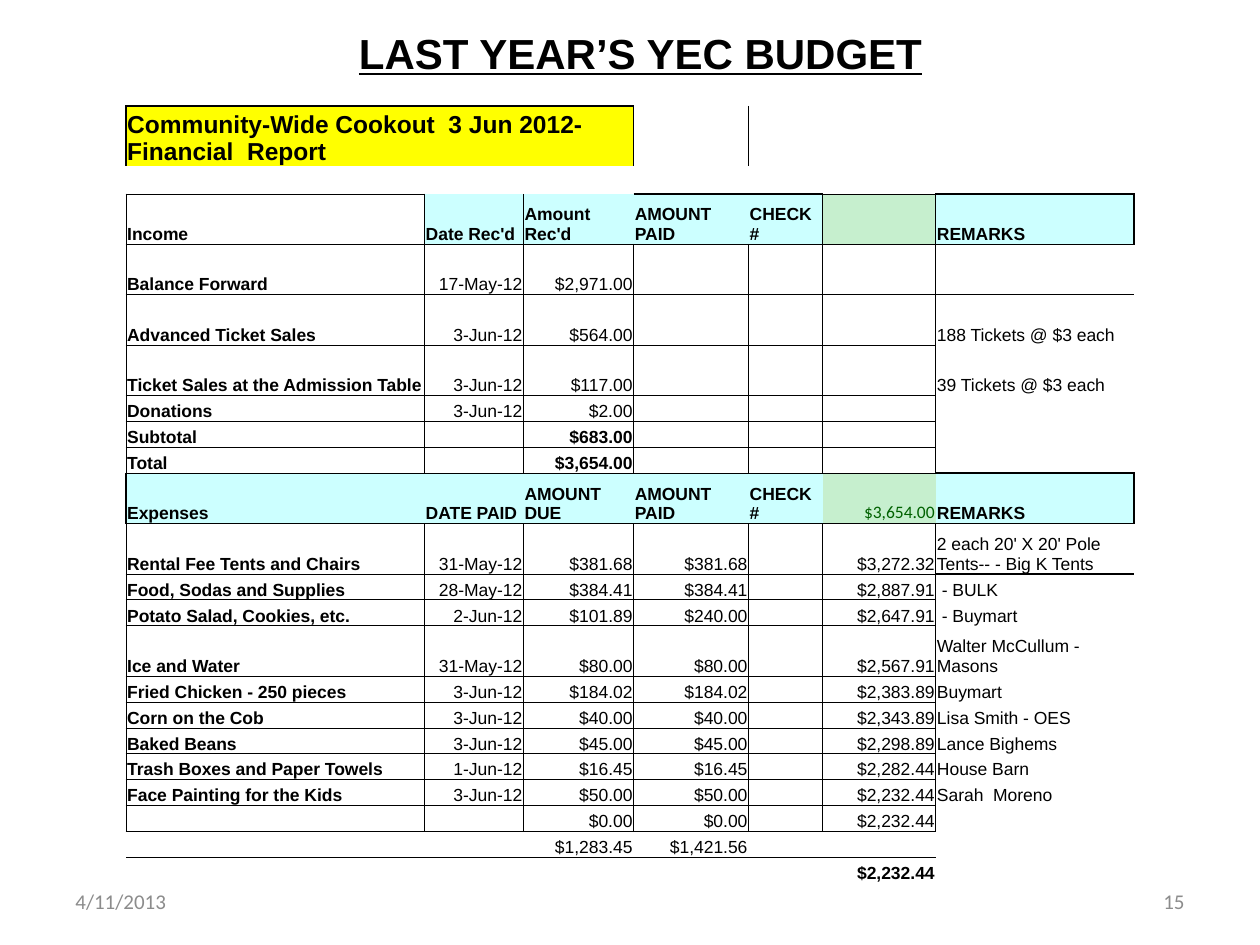
import pptx
import pptx.dml.color
import pptx.enum.text
import pptx.oxml
import pptx.oxml.ns
import pptx.util
from collections import defaultdict

Pt = pptx.util.Pt
RGBColor = pptx.dml.color.RGBColor
ALIGN = pptx.enum.text.PP_ALIGN
ANCHOR = pptx.enum.text.MSO_ANCHOR

BLACK = RGBColor(0, 0, 0)
WHITE = RGBColor(0xFF, 0xFF, 0xFF)
GREY = RGBColor(0x8C, 0x8C, 0x8C)
YELLOW = RGBColor(0xFF, 0xFF, 0)
AQUA = RGBColor(0xCC, 0xFF, 0xFF)
MINT = RGBColor(0xC6, 0xEF, 0xCE)
GREEN = RGBColor(0, 0x61, 0)

NO_STYLE = "{2D5ABB26-0587-4C30-8999-92F81FD0307C}"
THIN, THICK = 0.5, 1
# side: offset of the neighbouring cell and the side the two cells share
NEIGHBOUR = {"L": (0, -1, "R"), "R": (0, 1, "L"),
             "T": (-1, 0, "B"), "B": (1, 0, "T")}

COLUMN_WIDTHS = [170.6, 56.5, 63, 65.7, 42.3, 64.7, 113.2]
TALL, SHORT = 28.8, 14.8
BANNER, INCOME, EXPENSES = 0, 2, 9
TALL_ROWS = {2, 3, 4, 5, 9, 10, 13}
ROW_HEIGHTS = {0: 31.2, 1: 16}

LEDGER = [
    ["Community-Wide Cookout  3 Jun 2012- Financial  Report"],
    [],
    ["Income", "Date Rec'd", "Amount Rec'd", "AMOUNT PAID", "CHECK #", "", "REMARKS"],
    ["Balance Forward", "17-May-12", "$2,971.00"],
    ["Advanced Ticket Sales", "3-Jun-12", "$564.00", "", "", "", "188 Tickets @ $3 each"],
    ["Ticket Sales at the Admission Table", "3-Jun-12", "$117.00", "", "", "",
     "39 Tickets @ $3 each"],
    ["Donations", "3-Jun-12", "$2.00"],
    ["Subtotal", "", "$683.00"],
    ["Total", "", "$3,654.00"],
    ["Expenses", "DATE PAID", "AMOUNT DUE", "AMOUNT PAID", "CHECK #", "$3,654.00", "REMARKS"],
    ["Rental Fee Tents and Chairs", "31-May-12", "$381.68", "$381.68", "", "$3,272.32",
     "2 each 20' X 20' Pole Tents-- - Big K Tents"],
    ["Food, Sodas and Supplies", "28-May-12", "$384.41", "$384.41", "", "$2,887.91", " - BULK"],
    ["Potato Salad, Cookies, etc.", "2-Jun-12", "$101.89", "$240.00", "", "$2,647.91",
     " - Buymart"],
    ["Ice and Water", "31-May-12", "$80.00", "$80.00", "", "$2,567.91",
     "Walter McCullum - Masons"],
    ["Fried Chicken - 250 pieces", "3-Jun-12", "$184.02", "$184.02", "", "$2,383.89", "Buymart"],
    ["Corn on the Cob", "3-Jun-12", "$40.00", "$40.00", "", "$2,343.89", "Lisa Smith - OES"],
    ["Baked Beans", "3-Jun-12", "$45.00", "$45.00", "", "$2,298.89", "Lance Bighems"],
    ["Trash Boxes and Paper Towels", "1-Jun-12", "$16.45", "$16.45", "", "$2,282.44",
     "House Barn"],
    ["Face Painting for the Kids", "3-Jun-12", "$50.00", "$50.00", "", "$2,232.44",
     "Sarah  Moreno"],
    ["", "", "$0.00", "$0.00", "", "$2,232.44"],
    ["", "", "$1,283.45", "$1,421.56"],
    ["", "", "", "", "", "$2,232.44"],
]
BOLD_AMOUNTS = {(7, 2), (8, 2), (21, 5)}


def style(paragraph, size, color=BLACK, name="Arial", bold=False, align=ALIGN.LEFT):
    font = paragraph.font
    font.size, font.name, font.bold = Pt(size), name, bold
    font.color.rgb = color
    paragraph.alignment = align


def add_line_of_text(slide, box, text, **look):
    holder = slide.shapes.add_textbox(*(Pt(v) for v in box))
    frame = holder.text_frame
    frame.word_wrap = True
    frame.vertical_anchor = ANCHOR.MIDDLE
    paragraph = frame.paragraphs[0]
    paragraph.text = text
    style(paragraph, **look)
    return paragraph


def cell_fill(row, col):
    if row == BANNER and col < 3:
        return YELLOW
    if row in (INCOME, EXPENSES):
        if col == 5:
            return MINT
        return None if (row, col) == (INCOME, 0) else AQUA
    if (row in (1, 3, 4, 5, 6, 7) and col < 3) or (row in (10, 11) and col == 0):
        return WHITE
    return None


def ledger_borders():
    """Border widths as {(row, col): {side: points}}; both cells at an edge agree."""
    borders = defaultdict(dict)

    def rule(rows, cols, sides, width):
        for row in rows:
            for col in cols:
                for side in sides:
                    down, across, shared = NEIGHBOUR[side]
                    borders[row, col][side] = width
                    borders[row + down, col + across][shared] = width

    # Income and expense grids
    rule(range(3, 9), range(6), "LRTB", THIN)
    rule(range(10, 20), range(6), "LRTB", THIN)
    # Banner
    rule([BANNER], range(3), "T", THICK)
    rule([BANNER], [0], "L", THICK)
    rule([BANNER], [2], "R", THICK)
    # Income heading
    rule([INCOME], [0, 5], "LRTB", THIN)
    rule([INCOME], [3, 4], "T", THICK)
    # Expenses heading
    rule([EXPENSES], [0], "L", THICK)
    # Remarks headings
    rule([INCOME, EXPENSES], [6], "TRB", THICK)
    return borders


def draw_borders(cell, widths):
    properties = cell._tc.get_or_add_tcPr()
    sides = [side for side in "LRTB" if side in widths]
    for position, side in enumerate(sides):
        properties.insert(position, pptx.oxml.parse_xml(
            f'<a:ln{side} {pptx.oxml.ns.nsdecls("a")} w="{int(Pt(widths[side]))}">'
            f'<a:solidFill><a:srgbClr val="{BLACK}"/></a:solidFill></a:ln{side}>'))


def fill_cell(cell, row, col, text):
    cell.margin_left = cell.margin_right = cell.margin_top = Pt(0.7)
    cell.margin_bottom = 0
    cell.vertical_anchor = ANCHOR.BOTTOM
    color = cell_fill(row, col)
    if color is None:
        cell.fill.background()
    else:
        cell.fill.solid()
        cell.fill.fore_color.rgb = color

    paragraph = cell.text_frame.paragraphs[0]
    if not text:
        # Small end mark, so an empty cell does not stretch its row
        paragraph._p.get_or_add_endParaRPr().set("sz", "800")
        return
    paragraph.text = text
    heading = row in (INCOME, EXPENSES)
    if row == BANNER:
        style(paragraph, 14, bold=True)
    elif (row, col) == (EXPENSES, 5):
        style(paragraph, 10, GREEN, "Calibri", align=ALIGN.RIGHT)
    else:
        amount = not heading and 0 < col < 6
        style(paragraph, 10, bold=heading or col == 0 or (row, col) in BOLD_AMOUNTS,
              align=ALIGN.RIGHT if amount else ALIGN.LEFT)


def add_ledger(slide, left, top):
    heights = [ROW_HEIGHTS.get(row, TALL if row in TALL_ROWS else SHORT)
               for row in range(len(LEDGER))]
    frame = slide.shapes.add_table(len(heights), len(COLUMN_WIDTHS), Pt(left), Pt(top),
                                   Pt(sum(COLUMN_WIDTHS)), Pt(sum(heights)))
    ledger = frame.table
    ledger.first_row = ledger.horz_banding = False
    ledger._tbl.tblPr.find(pptx.oxml.ns.qn("a:tableStyleId")).text = NO_STYLE
    for column, width in zip(ledger.columns, COLUMN_WIDTHS):
        column.width = Pt(width)
    for line, height in zip(ledger.rows, heights):
        line.height = Pt(height)

    borders = ledger_borders()
    for row, entries in enumerate(LEDGER):
        for col in range(len(COLUMN_WIDTHS)):
            cell = ledger.cell(row, col)
            fill_cell(cell, row, col, entries[col] if col < len(entries) else "")
            widths = dict(borders[row, col])
            if (row, col) == (BANNER, 0):
                widths["R"] = THICK  # right edge of the merged banner
            draw_borders(cell, widths)
    ledger.cell(BANNER, 0).merge(ledger.cell(BANNER, 2))


def add_footer(slide, left, top, width, height):
    part = 168
    look = dict(size=12, color=GREY, name="Calibri")
    add_line_of_text(slide, (left, top, part, height), "4/11/2013", **look)
    add_line_of_text(slide, (left + width - part, top, part, height), "15",
                     align=ALIGN.RIGHT, **look)


def main():
    deck = pptx.Presentation()
    deck.slide_width, deck.slide_height = Pt(720), Pt(540)
    slide = deck.slides.add_slide(deck.slide_layouts[6])
    add_footer(slide, 36, 500.5, 648, 28.8)
    add_ledger(slide, 72, 60.5)
    title = add_line_of_text(slide, (48, 6, 636, 48), "LAST YEAR’S YEC BUDGET",
                             size=24, bold=True, align=ALIGN.CENTER)
    title.font.underline = True
    deck.save("out.pptx")


if __name__ == "__main__":
    main()
